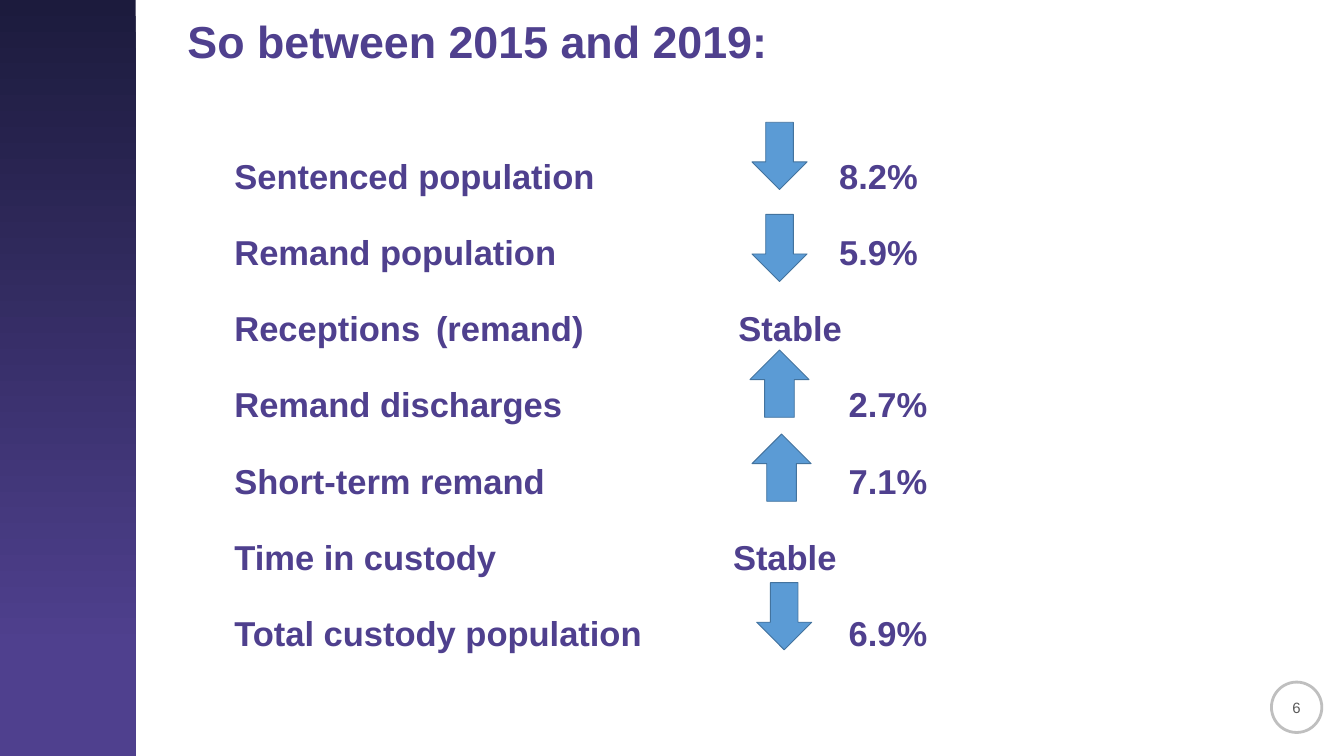
from typing import NamedTuple

from pptx import Presentation
from pptx.dml.color import RGBColor
from pptx.enum.shapes import MSO_SHAPE as Shape
from pptx.enum.text import MSO_ANCHOR as Anchor, MSO_AUTO_SIZE as AutoSize, PP_ALIGN as Align
from pptx.oxml.ns import qn
from pptx.util import Inches, Pt
from lxml.etree import SubElement

COLORS = {
    "night": "1C1B3D",
    "purple": "4F408E",
    "arrow": "5B9BD5",
    "arrow_edge": "43739E",
    "ring": "BFBFBF",
    "number": "595959",
    "white": "FFFFFF",
}


class Row(NamedTuple):
    text: str
    tabs: tuple[float, ...]


class Arrow(NamedTuple):
    kind: Shape
    left: float
    top: float
    width: float


DOWN, UP = Shape.DOWN_ARROW, Shape.UP_ARROW

ROWS = [
    Row("Sentenced population\t8.2%", (9.0,)),
    Row("Remand population\t5.9%", (9.0,)),
    Row("Receptions\t(remand)\tStable", (3.0, 7.5)),
    Row("Remand discharges\t2.7%", (9.14,)),
    Row("Short-term remand\t7.1%", (9.14,)),
    Row("Time in custody\tStable", (7.42,)),
    Row("Total custody population\t6.9%", (9.14,)),
]

ARROWS = [
    Arrow(DOWN, 11.19, 1.82, 0.82),
    Arrow(DOWN, 11.19, 3.19, 0.82),
    Arrow(UP, 11.16, 5.21, 0.88),
    Arrow(UP, 11.19, 6.46, 0.88),
    Arrow(DOWN, 11.26, 8.67, 0.82),
]


def rgb(name: str) -> RGBColor:
    return RGBColor.from_string(COLORS[name])


def set_all(obj, values: dict) -> None:
    for name, value in values.items():
        setattr(obj, name, value)


def place(sp, left: float, top: float, width: float, height: float) -> None:
    box = {"left": left, "top": top, "width": width, "height": height}
    set_all(sp, {name: Inches(value) for name, value in box.items()})


def add_shape(slide, kind: Shape, box: tuple, fill: str, line: str, weight: float):
    sp = slide.shapes.add_shape(kind, *map(Inches, box))
    sp.shadow.inherit = False
    sp.fill.solid()
    sp.fill.fore_color.rgb = rgb(fill)
    sp.line.color.rgb = rgb(line)
    sp.line.width = Pt(weight)
    return sp


def write(p, text: str, size: float, color: str, bold: bool, spacing: dict) -> None:
    set_all(p, spacing)
    r = p.add_run()
    r.text = text
    set_all(r.font, {"name": "Arial", "size": Pt(size), "bold": bold})
    r.font.color.rgb = rgb(color)


def add_tabs(p, stops: tuple[float, ...]) -> None:
    tabs = SubElement(p._p.get_or_add_pPr(), qn("a:tabLst"))
    for stop in stops:
        SubElement(tabs, qn("a:tab"), pos=str(Inches(stop)), algn="l")


def add_side_band(slide) -> None:
    sp = slide.shapes.add_shape(Shape.RECTANGLE, 0, 0, Inches(2.02), Inches(11.25))
    sp.shadow.inherit = False
    sp.line.fill.background()
    sp.fill.gradient()
    sp.fill.gradient_angle = 270
    for stop, (position, color) in zip(sp.fill.gradient_stops, [(0, "night"), (0.86, "purple")]):
        stop.position = position
        stop.color.rgb = rgb(color)


def add_page_number(slide, number: str) -> None:
    sp = add_shape(slide, Shape.OVAL, (18.92, 10.15, 0.75, 0.75), "white", "ring", 3)
    tf = sp.text_frame
    set_all(tf, {"margin_left": 0, "margin_right": 0, "vertical_anchor": Anchor.MIDDLE})
    write(tf.paragraphs[0], number, 16, "number", False, {"alignment": Align.CENTER})


def add_title(slide, text: str) -> None:
    sp = slide.shapes.title
    place(sp, 2.69, 0.33, 15.17, 0.66)
    tf = sp.text_frame
    set_all(tf, {"word_wrap": True, "auto_size": AutoSize.NONE, "vertical_anchor": Anchor.TOP})
    write(tf.paragraphs[0], text, 48, "purple", True, {
        "alignment": Align.LEFT, "line_spacing": Pt(45),
        "space_before": Pt(12), "space_after": Pt(12),
    })


def add_rows(slide, rows: list[Row]) -> None:
    sp = slide.shapes.add_textbox(*map(Inches, (3.39, 1.95, 11, 8.13)))
    tf = sp.text_frame
    tf.word_wrap = True
    for i, row in enumerate(rows):
        p = tf.add_paragraph() if i else tf.paragraphs[0]
        write(p, row.text, 37, "purple", True, {"line_spacing": 1.5, "space_before": Pt(15)})
        add_tabs(p, row.tabs)


def main() -> None:
    prs = Presentation()
    set_all(prs, {"slide_width": Inches(20), "slide_height": Inches(11.25)})
    slide = prs.slides.add_slide(prs.slide_layouts[5])
    add_side_band(slide)
    add_page_number(slide, "6")
    add_title(slide, "So between 2015 and 2019:")
    add_rows(slide, ROWS)
    for arrow in ARROWS:
        box = (arrow.left, arrow.top, arrow.width, 1)
        add_shape(slide, arrow.kind, box, "arrow", "arrow_edge", 1)
    prs.save("out.pptx")


if __name__ == "__main__":
    main()
